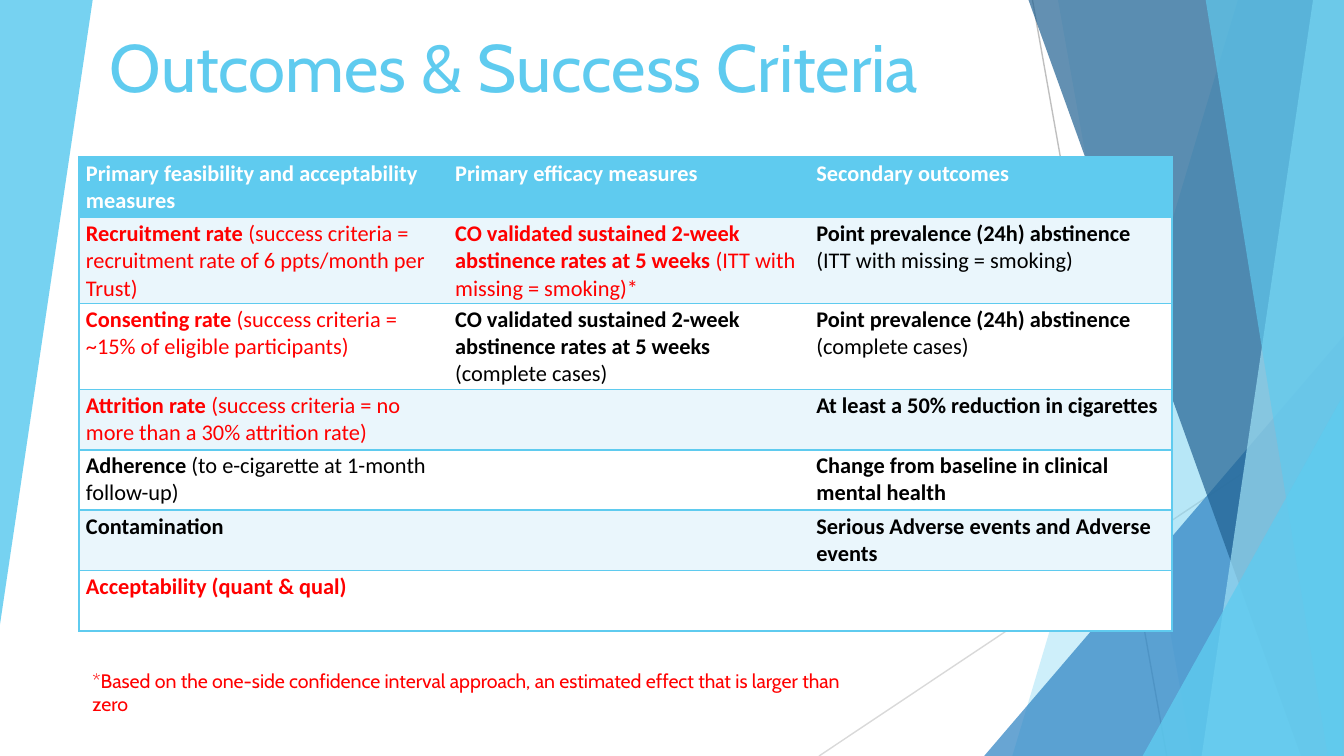
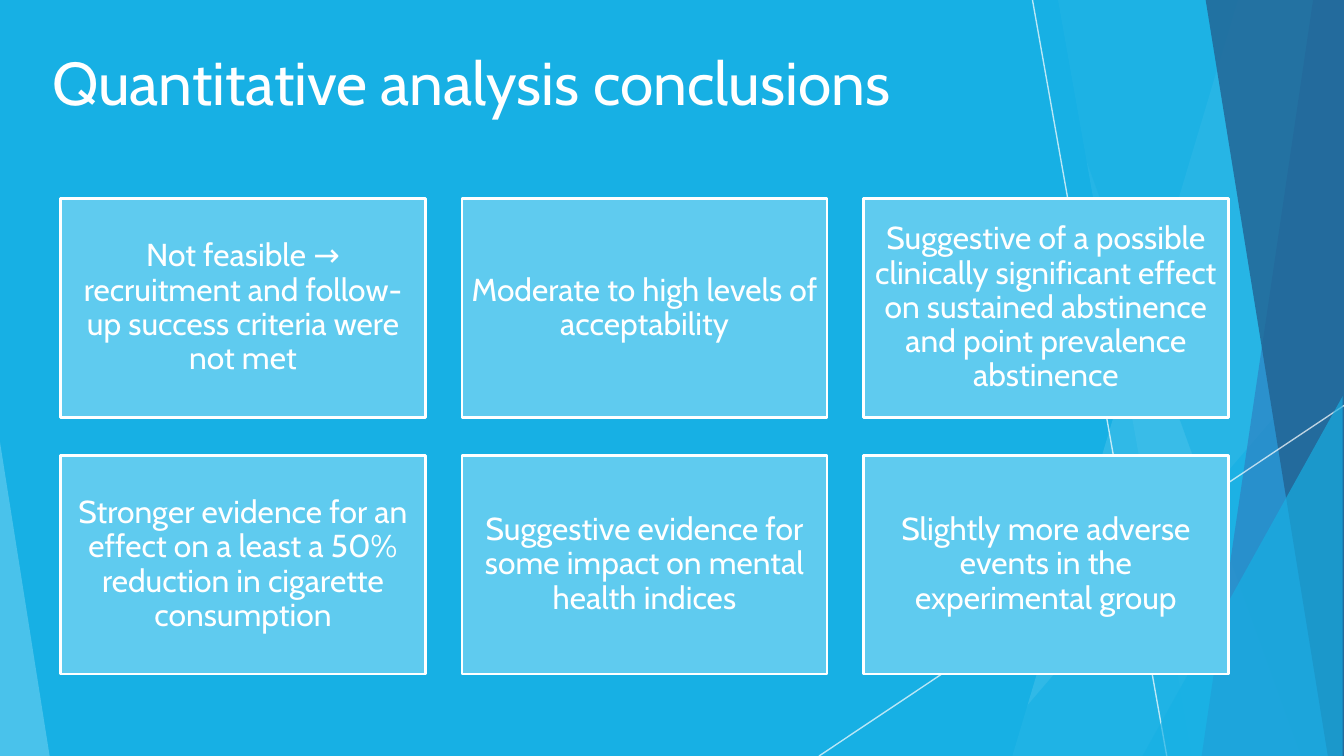
"""Build two slides on study outcomes and quantitative conclusions."""
from dataclasses import dataclass

from lxml.etree import SubElement
from pptx import Presentation
from pptx.dml.color import RGBColor
from pptx.enum.shapes import MSO_CONNECTOR, MSO_SHAPE
from pptx.enum.text import MSO_ANCHOR, PP_ALIGN
from pptx.oxml.ns import qn
from pptx.util import Inches, Pt


@dataclass(frozen=True)
class Theme:
    sky: str = "5FCBEF"
    azure: str = "17B0E4"
    blue: str = "2E83C3"
    navy: str = "226292"
    pale: str = "9FE0F5"
    band: str = "EAF6FC"
    white: str = "FFFFFF"
    black: str = "000000"
    red: str = "FF0000"
    silver: str = "BFBFBF"
    light: str = "D9D9D9"
    font: str = "Cabin"
    table_font: str = "Calibri"
    title: float = 36
    title_small: float = 32.4
    box: float = 17
    cell: float = 12
    note: float = 10.5


T = Theme()
W, H = 10.01, 5.63

LINES = {
    "steep line": ((7.69, 0), (8.69, H)),
    "shallow line": ((W, 3.02), (6.1, H)),
}
FACETS = {
    "wide": (9.22, 7.54),
    "middle": (7.88, 8.88),
    "dark": (7.66, 9.69),
    "narrow": (9.78, 8.95),
    "edge": (8.98, 9.89),
}
TRIANGLES = {
    "large triangle": (7.33, 2.5, 2.68, 3.13, 1, 0),
    "small triangle": (8.51, 2.95, 1.49, 2.68, 1, 0),
    "top left": (0, 0, 0.69, 4.65, 1, 180),
    "bottom left": (0, 3.29, 0.37, 2.34, 0, 0),
}

LIGHT_DECOR = [
    ("steep line", T.silver, 100),
    ("shallow line", T.light, 100),
    ("wide", T.sky, 30),
    ("middle", T.sky, 20),
    ("large triangle", T.blue, 72),
    ("dark", T.navy, 70),
    ("narrow", T.pale, 70),
    ("edge", T.sky, 65),
    ("small triangle", T.sky, 80),
    ("top left", T.sky, 85),
]
BLUE_DECOR = [
    ("wide", T.sky, 36),
    ("middle", T.sky, 20),
    ("large triangle", T.azure, 66),
    ("dark", T.azure, 50),
    ("steep line", T.white, 70),
    ("narrow", T.blue, 70),
    ("edge", T.navy, 80),
    ("shallow line", T.white, 70),
    ("small triangle", T.azure, 66),
    ("bottom left", T.sky, 70),
]

EMPTY = ("", "", T.black)
CO_RATES = "CO validated sustained 2-week abstinence rates at 5 weeks "
POINT = "Point prevalence (24h) abstinence "
OUTCOMES = [
    [("Primary feasibility and acceptability measures", "", T.white),
     ("Primary efficacy measures", "", T.white),
     ("Secondary outcomes", "", T.white)],
    [("Recruitment rate ", "(success criteria = recruitment rate of 6 ppts/month per Trust)", T.red),
     (CO_RATES, "(ITT with missing = smoking)*", T.red),
     (POINT, "(ITT with missing = smoking)", T.black)],
    [("Consenting rate ", "(success criteria = ~15% of eligible participants)", T.red),
     (CO_RATES, "(complete cases)", T.black),
     (POINT, "(complete cases)", T.black)],
    [("Attrition rate ", "(success criteria = no more than a 30% attrition rate)", T.red),
     EMPTY,
     ("At least a 50% reduction in cigarettes", "", T.black)],
    [("Adherence", " (to e-cigarette at 1-month follow-up)", T.black),
     EMPTY,
     ("Change from baseline in clinical mental health", "", T.black)],
    [("Contamination", "", T.black),
     EMPTY,
     ("Serious Adverse events and Adverse events", "", T.black)],
    [("Acceptability (quant & qual)", "", T.red), EMPTY, EMPTY],
]
COL_WIDTHS = [2.75, 2.69, 2.7]
ROW_HEIGHTS = [0.45, 0.61, 0.63, 0.45, 0.45, 0.45, 0.45]
NOTE = ("*Based on the one-side confidence interval approach, "
        "an estimated effect that is larger than zero")

CONCLUSIONS = [
    "Not feasible → recruitment and follow-up success criteria were not met",
    "Moderate to high levels of acceptability",
    "Suggestive of a possible clinically significant effect on sustained "
    "abstinence and point prevalence abstinence",
    "Stronger evidence for an effect on a least a 50% reduction in cigarette consumption",
    "Suggestive evidence for some impact on mental health indices",
    "Slightly more adverse events in the experimental group",
]


def rgb(color):
    """Return the RGB colour of a hex string."""
    return RGBColor.from_string(color)


def inches(*values):
    """Convert several lengths to EMU."""
    return [Inches(v) for v in values]


def write(tf, *runs, size, color, font=T.font, align=None, spacing=None):
    """Write (text, bold) runs as one formatted paragraph."""
    tf.word_wrap = True
    p = tf.paragraphs[0]
    p.alignment = align
    p.line_spacing = spacing
    for text, bold in runs:
        if text:
            r = p.add_run()
            r.text = text
            r.font.size, r.font.name, r.font.bold = Pt(size), font, bold
            r.font.color.rgb = rgb(color)


def add_text(s, box, text, anchor=MSO_ANCHOR.TOP, **fmt):
    """Add a text box holding one paragraph."""
    tf = s.shapes.add_textbox(*inches(*box)).text_frame
    tf.vertical_anchor = anchor
    write(tf, (text, False), **fmt)


def fill_shape(sp, color):
    """Give a shape a flat fill without line or shadow."""
    sp.shadow.inherit = False
    sp.fill.solid()
    sp.fill.fore_color.rgb = rgb(color)
    sp.line.fill.background()


def add_decor(s, name, color, alpha):
    """Draw one named background line, facet or triangle."""
    if name in LINES:
        start, end = LINES[name]
        sp = s.shapes.add_connector(MSO_CONNECTOR.STRAIGHT, *inches(*start, *end))
        sp.line.color.rgb = rgb(color)
        sp.line.width = Pt(0.75)
        SubElement(sp._element.spPr, qn("a:effectLst"))
    elif name in FACETS:
        top, bottom = FACETS[name]
        builder = s.shapes.build_freeform(*inches(top, 0))
        builder.add_line_segments([inches(W, 0), inches(W, H), inches(bottom, H)])
        sp = builder.convert_to_shape()
        fill_shape(sp, color)
    else:
        *box, apex, turn = TRIANGLES[name]
        sp = s.shapes.add_shape(MSO_SHAPE.ISOSCELES_TRIANGLE, *inches(*box))
        sp.adjustments[0] = apex
        sp.rotation = turn
        fill_shape(sp, color)
    if alpha < 100:
        for clr in sp._element.spPr.iter(qn("a:srgbClr")):
            SubElement(clr, qn("a:alpha"), val=str(alpha * 1000))


def add_slide(prs, background, decor):
    """Add a blank slide with its background and facets."""
    s = prs.slides.add_slide(prs.slide_layouts[6])
    s.background.fill.solid()
    s.background.fill.fore_color.rgb = rgb(background)
    for item in decor:
        add_decor(s, *item)
    return s


def set_borders(cell, sides):
    """Draw the given sides of a cell and hide the others."""
    tc_pr = cell._tc.get_or_add_tcPr()
    for side in "LRTB":
        ln = SubElement(tc_pr, qn(f"a:ln{side}"), w=str(Pt(1)))
        if side in sides:
            solid = SubElement(ln, qn("a:solidFill"))
            SubElement(solid, qn("a:srgbClr"), val=T.sky)
        else:
            SubElement(ln, qn("a:noFill"))


def add_outcomes_table(s):
    """Add the table of outcomes."""
    size = inches(0.59, 1.17, sum(COL_WIDTHS), sum(ROW_HEIGHTS))
    table = s.shapes.add_table(len(OUTCOMES), len(COL_WIDTHS), *size).table
    table.horz_banding = False
    for column, width in zip(table.columns, COL_WIDTHS):
        column.width = Inches(width)
    for i, (row, height) in enumerate(zip(OUTCOMES, ROW_HEIGHTS)):
        table.rows[i].height = Inches(height)
        fill = T.sky if i == 0 else T.band if i % 2 else T.white
        for j, (strong, plain, color) in enumerate(row):
            cell = table.cell(i, j)
            cell.margin_left = cell.margin_right = Inches(0.05)
            cell.margin_top = cell.margin_bottom = Inches(0.02)
            set_borders(cell, ("LTB", "TB", "RTB")[j])
            cell.fill.solid()
            cell.fill.fore_color.rgb = rgb(fill)
            write(cell.text_frame, (strong, True), (plain, False),
                  size=T.cell, color=color, font=T.table_font)


def add_conclusion_boxes(s):
    """Lay the conclusions out in a grid of three columns."""
    left, top, width, height, gap_x, gap_y = 0.45, 1.48, 2.72, 1.63, 0.27, 0.28
    for i, text in enumerate(CONCLUSIONS):
        row, col = divmod(i, 3)
        x, y = left + col * (width + gap_x), top + row * (height + gap_y)
        sp = s.shapes.add_shape(MSO_SHAPE.RECTANGLE, *inches(x, y, width, height))
        fill_shape(sp, T.sky)
        sp.line.color.rgb = rgb(T.white)
        sp.line.width = Pt(1.5)
        tf = sp.text_frame
        tf.margin_left = tf.margin_right = tf.margin_top = tf.margin_bottom = Inches(0.07)
        tf.vertical_anchor = MSO_ANCHOR.MIDDLE
        write(tf, (text, False), size=T.box, color=T.white,
              align=PP_ALIGN.CENTER, spacing=0.9)


def main():
    """Build and save the presentation."""
    prs = Presentation()
    prs.slide_width, prs.slide_height = inches(W, H)

    s = add_slide(prs, T.white, LIGHT_DECOR)
    add_text(s, (0.72, -0.05, 6.72, 0.89), "Outcomes & Success Criteria",
             anchor=MSO_ANCHOR.BOTTOM, size=T.title, color=T.sky)
    add_outcomes_table(s)
    add_text(s, (0.59, 4.93, 5.85, 0.47), NOTE, size=T.note, color=T.red)

    s = add_slide(prs, T.azure, BLUE_DECOR)
    add_text(s, (0.29, 0.29, 7.06, 1.08), "Quantitative analysis conclusions",
             size=T.title_small, color=T.white)
    add_conclusion_boxes(s)

    prs.save("out.pptx")


if __name__ == "__main__":
    main()
